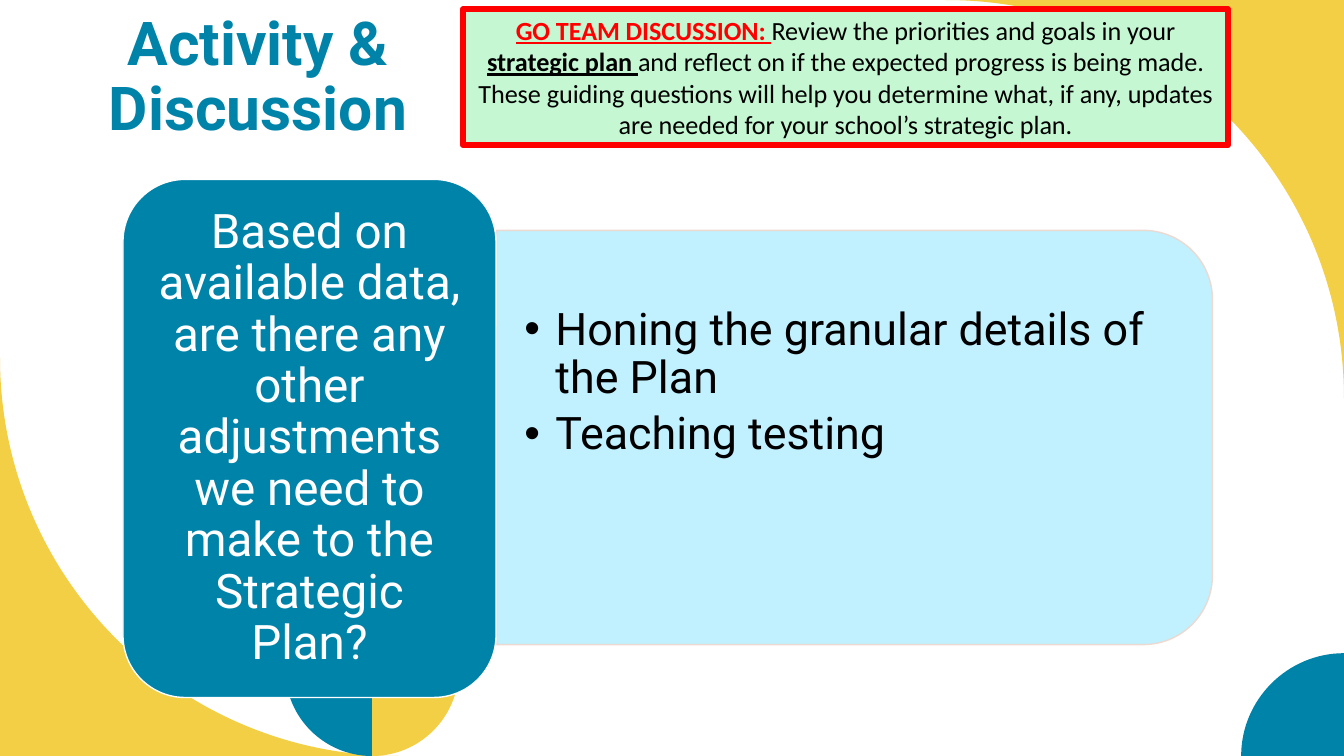
from dataclasses import dataclass

from lxml.etree import SubElement
from pptx import Presentation
from pptx.dml.color import RGBColor
from pptx.enum.shapes import MSO_SHAPE as Kind
from pptx.enum.text import MSO_ANCHOR as Anchor, PP_ALIGN as Align
from pptx.oxml.ns import qn
from pptx.shapes.autoshape import Shape
from pptx.text.text import TextFrame, _Paragraph as Para, _Run as Run
from pptx.util import Inches, Pt

GOLD = RGBColor(0xF3, 0xCF, 0x45)
TEAL = RGBColor(0x00, 0x83, 0xA9)
MINT = RGBColor(0xC4, 0xF7, 0xD2)
SKY = RGBColor(0xBB, 0xF0, 0xFF)
SAND = RGBColor(0xEF, 0xD7, 0xCD)
RED = RGBColor(0xFF, 0x00, 0x00)
BLACK = RGBColor(0x00, 0x00, 0x00)
WHITE = RGBColor(0xFF, 0xFF, 0xFF)

Point = tuple[float, float]
Step = tuple[float, ...]


@dataclass
class Patch:
    color: RGBColor
    start: Point
    steps: list[Step]


@dataclass
class Box:
    left: float
    top: float
    width: float
    height: float


@dataclass
class Part:
    text: str
    color: RGBColor = BLACK
    strong: bool = False


def leaf(color: RGBColor, side: int) -> Patch:
    def x(gap: float) -> float:
        return 3.69 + side * gap

    return Patch(color, (x(0.86), 6.11), [
        (x(0.86), 6.64),
        (x(0.86), 7.12, x(0.47), 7.5, x(0), 7.5),
        (x(0), 6.97),
        (x(0), 6.53, x(0.34), 6.16, x(0.77), 6.12),
    ])


PATCHES = [
    Patch(GOLD, (13.33, 0), [(13.33, 3.95), (13.33, 1.77, 11.57, 0, 9.38, 0)]),
    Patch(GOLD, (0, 3.55), [(0, 5.73, 1.77, 7.5, 3.95, 7.5), (0, 7.5)]),
    Patch(TEAL, (13.33, 7.5), [(13.33, 6.48), (12.77, 6.48, 12.31, 6.94, 12.31, 7.5)]),
    leaf(GOLD, 1),
    leaf(TEAL, -1),
]

NOTICE = [
    Part("GO TEAM DISCUSSION: ", RED, True),
    Part("Review the priorities and goals in your "),
    Part("strategic plan ", strong=True),
    Part("and reflect on if the expected progress is being made. "
         "These guiding questions will help you determine what, if any, "
         "updates are needed for your school’s strategic plan."),
]
ASK = ("Based on available data, are there any other adjustments "
       "we need to make to the Strategic Plan?")
IDEAS = ["Honing the granular details of the Plan", "Teaching testing"]

deck = Presentation()
deck.slide_width, deck.slide_height = Inches(13.33), Inches(7.5)
slide = deck.slides.add_slide(deck.slide_layouts[6])
shapes = slide.shapes


def bend(shape: Shape, steps: list[Step]) -> None:
    lines = iter(list(shape._element.spPr.iter(qn("a:lnTo"))))
    for step in steps:
        line = next(lines)
        if len(step) == 6:
            line.tag = qn("a:cubicBezTo")
            for _ in range(2):
                extra = next(lines)
                line.append(extra[0])
                extra.getparent().remove(extra)


def paint(patch: Patch) -> None:
    points = [patch.start]
    for step in patch.steps:
        points += zip(step[::2], step[1::2])
    first, *rest = [(Inches(x), Inches(y)) for x, y in points]
    pen = shapes.build_freeform(*first)
    pen.add_line_segments(rest, close=True)
    shape = pen.convert_to_shape()
    bend(shape, patch.steps)
    shape.shadow.inherit = False
    shape.fill.solid()
    shape.fill.fore_color.rgb = patch.color
    shape.line.fill.background()


def place(box: Box) -> tuple[Inches, ...]:
    return tuple(Inches(n) for n in (box.left, box.top, box.width, box.height))


def block(kind: Kind, box: Box, fill: RGBColor, line: RGBColor, width: float) -> Shape:
    shape = shapes.add_shape(kind, *place(box))
    shape.shadow.inherit = False
    shape.fill.solid()
    shape.fill.fore_color.rgb = fill
    shape.line.color.rgb = line
    shape.line.width = Pt(width)
    return shape


def setup(frame: TextFrame, side: float = 0.1, edge: float = 0.05) -> None:
    frame.word_wrap = True
    frame.vertical_anchor = Anchor.MIDDLE
    frame.margin_left = frame.margin_right = Inches(side)
    frame.margin_top = frame.margin_bottom = Inches(edge)


def style(run: Run, size: float, color: RGBColor, face: str = "Roboto",
          bold: bool = False) -> None:
    run.font.name = face
    run.font.size = Pt(size)
    run.font.bold = bold
    run.font.color.rgb = color


def write(para: Para, text: str, size: float, color: RGBColor,
          align: Align = Align.CENTER, bold: bool = False) -> None:
    para.text = text
    para.alignment = align
    para.line_spacing = 0.9
    style(para.runs[0], size, color, bold=bold)


def bullet(para: Para) -> None:
    props = para._p.get_or_add_pPr()
    props.set("marL", str(Inches(0.31)))
    props.set("indent", str(Inches(-0.31)))
    SubElement(props, qn("a:buFont"), typeface="Arial")
    SubElement(props, qn("a:buChar"), char="•")


for patch in PATCHES:
    paint(patch)

notice = block(Kind.RECTANGLE, Box(4.59, 0.09, 7.59, 1.35), MINT, RED, 4)
setup(notice.text_frame)
para = notice.text_frame.paragraphs[0]
para.alignment = Align.CENTER
for part in NOTICE:
    run = para.add_run()
    run.text = part.text
    style(run, 18.65, part.color, "Calibri", part.strong)
    run.font.underline = part.strong

title = shapes.add_textbox(*place(Box(0.58, 0.1, 3.96, 1.35))).text_frame
setup(title)
write(title.paragraphs[0], "Activity & Discussion", 43.2, TEAL, bold=True)

panel = block(Kind.ROUND_2_SAME_RECTANGLE, Box(6.42, 0.79, 4.11, 7.1), SKY, SAND, 1)
panel.rotation = 90
for color in panel._element.spPr.iter(qn("a:srgbClr")):
    SubElement(color, qn("a:alpha"), val="90000")

ideas = shapes.add_textbox(*place(Box(4.93, 2.49, 6.9, 3.71))).text_frame
setup(ideas, 0.27, 0.14)
ideas.vertical_anchor = Anchor.TOP
ideas.margin_top = Inches(0.55)
for i, idea in enumerate(IDEAS):
    para = ideas.add_paragraph() if i else ideas.paragraphs[0]
    write(para, idea, 32, BLACK, Align.LEFT)
    para.space_after = Pt(5.6)
    bullet(para)

card = block(Kind.ROUNDED_RECTANGLE, Box(1.22, 1.78, 3.7, 5.14), TEAL, WHITE, 1)
setup(card.text_frame, 0.14, 0.07)
write(card.text_frame.paragraphs[0], ASK, 34, WHITE)

deck.save("out.pptx")
